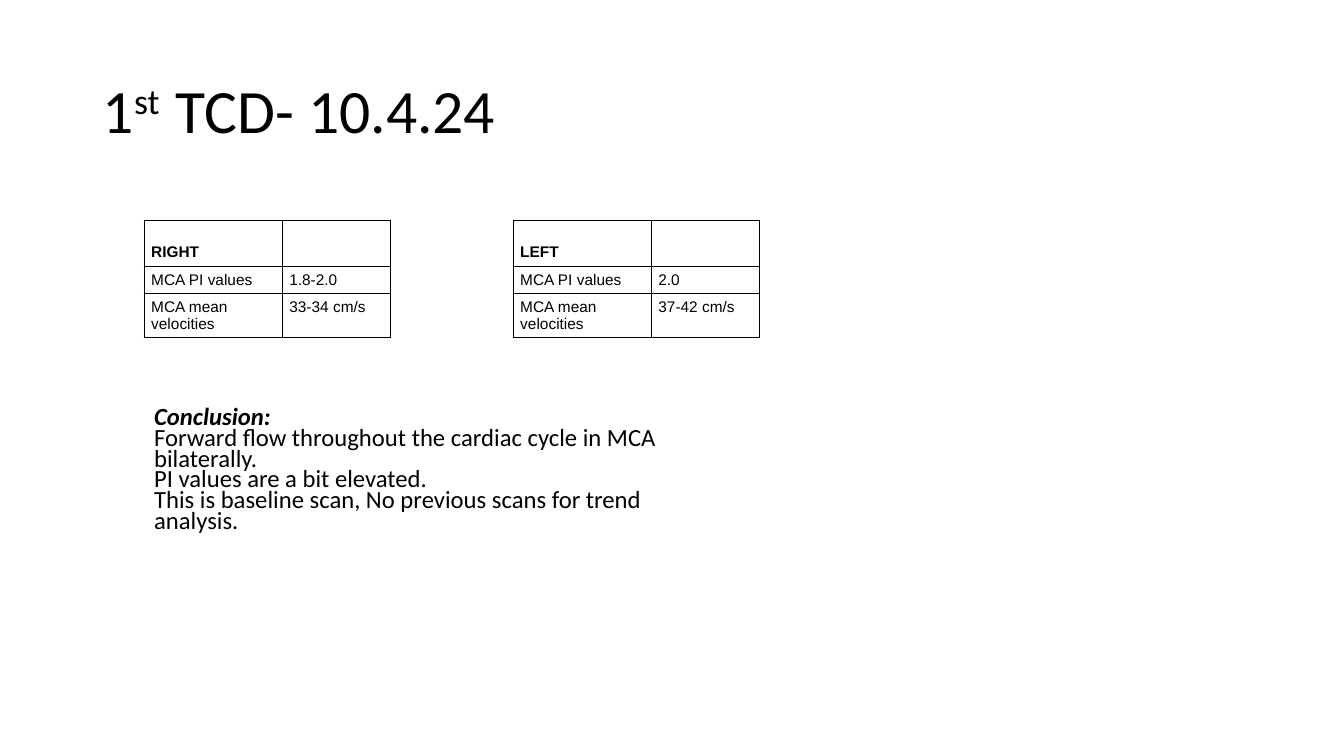
from dataclasses import dataclass
from lxml.etree import SubElement
from pptx import Presentation
from pptx.dml.color import RGBColor
from pptx.enum.text import MSO_ANCHOR, MSO_AUTO_SIZE, PP_ALIGN
from pptx.oxml.ns import qn
from pptx.util import Inches, Pt


@dataclass(frozen=True)
class Theme:
    ink: RGBColor = RGBColor(0, 0, 0)
    paper: RGBColor = RGBColor(255, 255, 255)
    text_font: str = "Calibri"
    table_font: str = "Arial"
    title_size: float = 44
    body_size: float = 17.6
    table_size: float = 11
    border: float = 0.75


theme = Theme()


def set_font(font, name, size, bold=False, italic=False):
    font.name = name
    font.size = Pt(size)
    font.bold = bold
    font.italic = italic
    font.color.rgb = theme.ink


def add_borders(cell):
    properties = cell._tc.get_or_add_tcPr()
    for index, side in enumerate(("lnL", "lnR", "lnT", "lnB")):
        line = properties.makeelement(qn(f"a:{side}"), {"w": str(Pt(theme.border))})
        fill = SubElement(line, qn("a:solidFill"))
        SubElement(fill, qn("a:srgbClr"), val=str(theme.ink))
        properties.insert(index, line)


deck = Presentation()
deck.slide_width = Inches(13.33)
deck.slide_height = Inches(7.5)
page = deck.slides.add_slide(deck.slide_layouts[5])

title = page.shapes.title
title.left, title.top = Inches(0.92), Inches(0.4)
title.width, title.height = Inches(11.5), Inches(1.45)
title.text_frame.vertical_anchor = MSO_ANCHOR.MIDDLE
title.text_frame.auto_size = MSO_AUTO_SIZE.NONE
para = title.text_frame.paragraphs[0]
para.alignment = PP_ALIGN.LEFT
para.line_spacing = 0.9
set_font(para.font, theme.text_font, theme.title_size)
for text, baseline in (("1", 0), ("st  ", 30000), ("TCD- 10.4.24", 0)):
    span = para.add_run()
    span.text = text
    set_font(span.font, theme.text_font, theme.title_size)
    if baseline:
        span.font._element.set("baseline", str(baseline))

margin = Inches(1.43)
table_step = Inches(3.66)
column_widths = (1.37, 1.07)
row_heights = (0.45, 0.27, 0.44)
sides = (
    ("RIGHT", "1.8-2.0", "33-34 cm/s"),
    ("LEFT", "2.0", "37-42 cm/s"),
)

for position, (side, pulsatility, velocity) in enumerate(sides):
    rows = (
        (side, ""),
        ("MCA PI values", pulsatility),
        ("MCA mean velocities", velocity),
    )
    table = page.shapes.add_table(
        len(rows), len(column_widths),
        margin + position * table_step, Inches(2.19),
        Inches(sum(column_widths)), Inches(sum(row_heights)),
    ).table
    table.first_row = False
    table.horz_banding = False
    for column, width in zip(table.columns, column_widths):
        column.width = Inches(width)
    for row_index, (texts, height) in enumerate(zip(rows, row_heights)):
        table.rows[row_index].height = Inches(height)
        for column_index, text in enumerate(texts):
            cell = table.cell(row_index, column_index)
            cell.text = text
            cell.margin_left = cell.margin_right = Inches(0.07)
            cell.margin_top = cell.margin_bottom = Inches(0.05)
            header = row_index == 0
            cell.vertical_anchor = MSO_ANCHOR.BOTTOM if header else MSO_ANCHOR.TOP
            cell.fill.solid()
            cell.fill.fore_color.rgb = theme.paper
            set_font(cell.text_frame.paragraphs[0].font,
                     theme.table_font, theme.table_size, bold=header)
            add_borders(cell)

conclusion = (
    "Conclusion:",
    "Forward flow throughout the cardiac cycle in MCA bilaterally.",
    "PI values are a bit elevated.",
    "This is baseline scan, No previous scans for trend analysis.",
)
box = page.shapes.add_textbox(margin, Inches(3.95), Inches(5.68), Inches(1.45))
frame = box.text_frame
frame.word_wrap = True
frame.vertical_anchor = MSO_ANCHOR.MIDDLE
frame.text = "\n".join(conclusion)
for index, para in enumerate(frame.paragraphs):
    para.line_spacing = 0.7
    heading = index == 0
    set_font(para.font, theme.text_font, theme.body_size, bold=heading, italic=heading)

deck.save("out.pptx")
